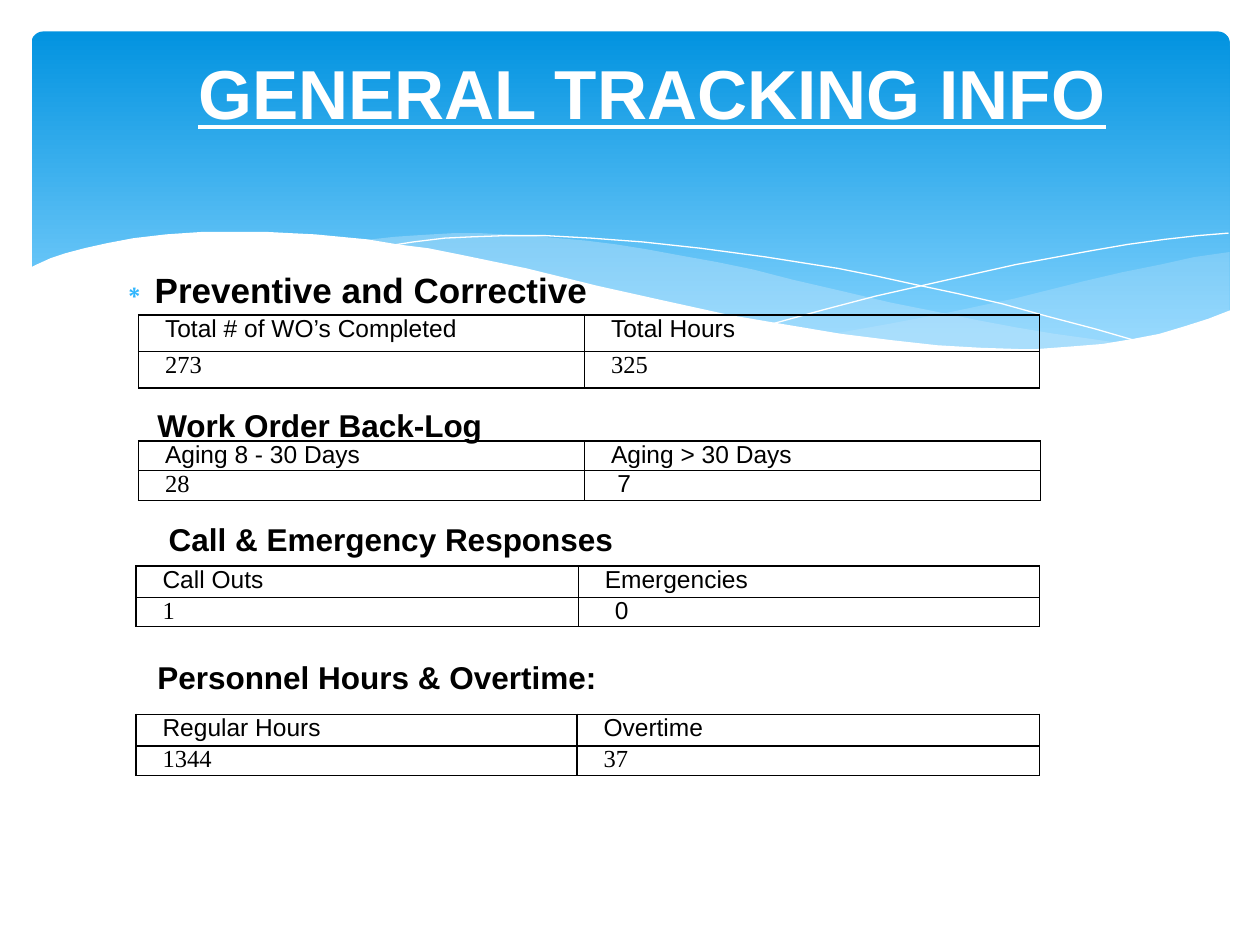
from lxml.etree import SubElement
from pptx import Presentation
from pptx.dml.color import RGBColor
from pptx.enum.shapes import MSO_SHAPE as SHAPE
from pptx.enum.text import MSO_ANCHOR as ANCHOR, MSO_AUTO_SIZE as AUTO, PP_ALIGN as ALIGN
from pptx.oxml.ns import qn
from pptx.util import Inches, Pt

COLORS = {"white": "FFFFFF", "black": "000000", "bullet": "31B6FD",
          "sky_top": "0293E0", "sky_bottom": "83D3FE", "wave": "C6E7FC"}
SANS, SERIF = "Arial", "Times New Roman"

TITLE = "GENERAL TRACKING INFO"
BULLET_HEADING = "Preventive and Corrective"

# Headings: text, left, top, width, indent
HEADINGS = [
    ("Work Order Back-Log", 1.15, 3.17, 2.81, 0),
    ("Call & Emergency Responses", 1.1, 4.08, 3.9, 0.14),
    ("Personnel Hours & Overtime:", 1.15, 5.17, 3.79, 0),
]

# Tables: place, column widths, row heights, labels, values, font and indent of last value
TABLES = [
    dict(at=(1.1, 2.5), cols=(3.54, 3.61), rows=(0.29, 0.29), last=(SERIF, 0.14),
         cells=[("Total # of WO’s Completed", "Total Hours"), ("273", "325")]),
    dict(at=(1.1, 3.5), cols=(3.54, 3.62), rows=(0.23, 0.24), last=(SANS, 0.19),
         cells=[("Aging 8 - 30 Days", "Aging > 30 Days"), ("28", "7")]),
    dict(at=(1.08, 4.49), cols=(3.51, 3.66), rows=(0.25, 0.23), last=(SANS, 0.22),
         cells=[("Call Outs", "Emergencies"), ("1", "0")]),
    dict(at=(1.08, 5.67), cols=(3.5, 3.67), rows=(0.25, 0.23), last=(SERIF, 0.14),
         cells=[("Regular Hours", "Overtime"), ("1344", "37")]),
]

# Waves, from back to front
RIGHT_WAVE = [
    (9.76, 2), (9.48, 2.04), (9.21, 2.1), (8.91, 2.16), (8.61, 2.23), (8.05, 2.37),
    (7.53, 2.48), (7.06, 2.57), (6.61, 2.65), (6.91, 2.69), (7.19, 2.72), (7.45, 2.75),
    (7.69, 2.77), (8.03, 2.78), (8.35, 2.77), (8.63, 2.75), (8.89, 2.72), (9.13, 2.67),
    (9.35, 2.62), (9.49, 2.57), (9.63, 2.52), (9.76, 2.47)]
MIDDLE_WAVE = [
    (8.93, 2.73), (8.66, 2.69), (8.37, 2.65), (8.07, 2.6), (7.75, 2.54), (7.41, 2.47),
    (7.06, 2.4), (6.68, 2.31), (6.29, 2.22), (5.98, 2.14), (5.69, 2.08), (5.41, 2.03),
    (5.14, 1.98), (4.89, 1.94), (4.65, 1.91), (4.42, 1.89), (4.2, 1.87), (3.99, 1.86),
    (3.8, 1.85), (3.61, 1.85), (3.44, 1.86), (3.28, 1.87), (3.13, 1.88), (2.86, 1.91),
    (3.23, 1.96), (3.62, 2.03), (4.04, 2.11), (4.49, 2.22), (4.91, 2.32), (5.3, 2.4),
    (5.66, 2.48), (6.01, 2.55), (6.34, 2.61), (6.65, 2.66), (6.95, 2.7), (7.22, 2.74),
    (7.48, 2.76), (7.73, 2.77), (7.96, 2.78), (8.28, 2.78), (8.57, 2.77), (8.76, 2.75)]
FALLING_LINE = [
    (3.09, 1.95), (3.28, 1.92), (3.53, 1.89), (3.74, 1.88), (4.01, 1.87), (4.33, 1.87),
    (4.69, 1.89), (5.1, 1.92), (5.56, 1.97), (6.08, 2.04), (6.65, 2.13), (6.95, 2.19),
    (7.27, 2.26), (7.6, 2.33), (7.95, 2.41), (8.31, 2.51), (8.69, 2.61), (9.07, 2.72)]
RISING_LINE = [
    (6.13, 2.57), (6.53, 2.46), (6.95, 2.35), (7.48, 2.23), (8.06, 2.1), (8.66, 1.99),
    (8.95, 1.94), (9.24, 1.9), (9.51, 1.87), (9.75, 1.85)]
FRONT_WAVE = [
    (9.77, 2.46), (9.59, 2.53), (9.4, 2.59), (9.2, 2.65), (8.99, 2.69), (8.75, 2.73),
    (8.5, 2.75), (8.23, 2.77), (8.09, 2.77), (7.78, 2.76), (7.44, 2.74), (7.08, 2.7),
    (6.68, 2.65), (6.26, 2.58), (5.79, 2.5), (5.29, 2.39), (4.75, 2.27), (4.18, 2.13),
    (3.65, 2.02), (3.4, 1.97), (3.16, 1.94), (2.92, 1.9), (2.71, 1.88), (2.5, 1.86),
    (2.3, 1.85), (2.11, 1.84), (1.61, 1.84), (1.32, 1.86), (1.06, 1.89), (0.85, 1.93),
    (0.67, 1.97), (0.52, 2.01), (0.4, 2.05), (0.29, 2.1), (0.23, 2.13), (0.23, 3.29),
    (9.77, 3.29)]
# Points, fill, opacity in percent (no fill: an open white line)
WAVES = [(RIGHT_WAVE, "wave", 29), (MIDDLE_WAVE, "wave", 40), (FALLING_LINE, None, 100),
         (RISING_LINE, None, 100), (FRONT_WAVE, "white", 100)]


def rgb(name):
    return RGBColor.from_string(COLORS[name])


def write(tf, text, size=14, font=SANS, color="black", bold=False, underline=False,
          align=ALIGN.LEFT, indent=0, hanging=0):
    p = tf.paragraphs[0]
    p.alignment = align
    pPr = p._p.get_or_add_pPr()
    pPr.set("marL", str(Inches(indent)))
    pPr.set("indent", str(-Inches(hanging)))
    r = p.add_run()
    r.text = text
    r.font.size, r.font.name = Pt(size), font
    r.font.bold, r.font.underline = bold, underline
    r.font.color.rgb = rgb(color)
    return p


def add_box(slide, left, top, width, height, wrap=True):
    tf = slide.shapes.add_textbox(*map(Inches, (left, top, width, height))).text_frame
    tf.word_wrap = wrap
    tf.auto_size = AUTO.NONE if wrap else AUTO.SHAPE_TO_FIT_TEXT
    return tf


def add_wave(slide, points, fill, opacity):
    # The builder rounds to whole units, so points go in as EMU
    start, *rest = [(Inches(x), Inches(y)) for x, y in points]
    builder = slide.shapes.build_freeform(*start)
    builder.add_line_segments(rest, close=fill is not None)
    sp = builder.convert_to_shape()
    sp.shadow.inherit = False
    if fill is None:
        sp.fill.background()
        sp.line.color.rgb = rgb("white")
        sp.line.width = Pt(0)
        return
    sp.fill.solid()
    sp.fill.fore_color.rgb = rgb(fill)
    sp.line.fill.background()
    if opacity < 100:
        color = sp._element.spPr.find(".//" + qn("a:srgbClr"))
        SubElement(color, qn("a:alpha"), val=str(opacity * 1000))


def add_borders(cell):
    tcPr = cell._tc.get_or_add_tcPr()
    for i, side in enumerate(("lnL", "lnR", "lnT", "lnB")):
        ln = tcPr.makeelement(qn("a:" + side), {"w": str(Pt(1))})
        solid = SubElement(ln, qn("a:solidFill"))
        SubElement(solid, qn("a:srgbClr"), val=COLORS["black"])
        tcPr.insert(i, ln)


def add_tracking_table(slide, at, cols, rows, cells, last):
    size = (sum(cols), sum(rows))
    table = slide.shapes.add_table(len(rows), len(cols), *map(Inches, at + size)).table
    table.first_row = table.horz_banding = False
    for column, width in zip(table.columns, cols):
        column.width = Inches(width)
    for i, height in enumerate(rows):
        table.rows[i].height = Inches(height)
        for j, text in enumerate(cells[i]):
            cell = table.cell(i, j)
            cell.margin_left = cell.margin_right = Inches(0.07)
            cell.margin_top = cell.margin_bottom = 0
            cell.fill.background()
            add_borders(cell)
            font, indent = (SANS if i == 0 else SERIF), 0.14
            if (i, j) == (1, 1):
                font, indent = last
            write(cell.text_frame, text, font=font, indent=indent)


def main():
    prs = Presentation()
    prs.slide_width, prs.slide_height = Inches(10), Inches(7.5)
    slide = prs.slides.add_slide(prs.slide_layouts[6])

    # Sky band with waves
    sky = slide.shapes.add_shape(SHAPE.ROUNDED_RECTANGLE,
                                 *map(Inches, (0.25, 0.25, 9.51, 2.7)))
    sky.adjustments[0] = 0.034
    sky.shadow.inherit = False
    sky.line.fill.background()
    sky.fill.gradient()
    sky.fill.gradient_angle = 270
    stops = zip(sky.fill.gradient_stops, ("sky_top", "sky_bottom"), (0, 0.9))
    for stop, color, position in stops:
        stop.color.rgb, stop.position = rgb(color), position
    for wave in WAVES:
        add_wave(slide, *wave)

    # Bulleted heading
    tf = add_box(slide, 0.83, 2.08, 8.1, 0.49)
    p = write(tf, BULLET_HEADING, size=20, bold=True, indent=0.3, hanging=0.3)
    pPr = p._p.get_or_add_pPr()
    SubElement(SubElement(pPr, qn("a:buClr")), qn("a:srgbClr"), val=COLORS["bullet"])
    SubElement(pPr, qn("a:buFont"), typeface=SERIF)
    SubElement(pPr, qn("a:buChar"), char="∗")

    # Title
    tf = add_box(slide, 0.5, 0.37, 9, 1.37)
    tf.vertical_anchor = ANCHOR.TOP
    tf.margin_top = Inches(0.03)
    write(tf, TITLE, size=39.6, color="white", bold=True, underline=True,
          align=ALIGN.CENTER, indent=0.35)

    # Headings and tables
    for text, left, top, width, indent in HEADINGS:
        tf = add_box(slide, left, top, width, 0.4, wrap=False)
        write(tf, text, size=18, bold=True, indent=indent)
    for table in TABLES:
        add_tracking_table(slide, **table)

    prs.save("out.pptx")


if __name__ == "__main__":
    main()
